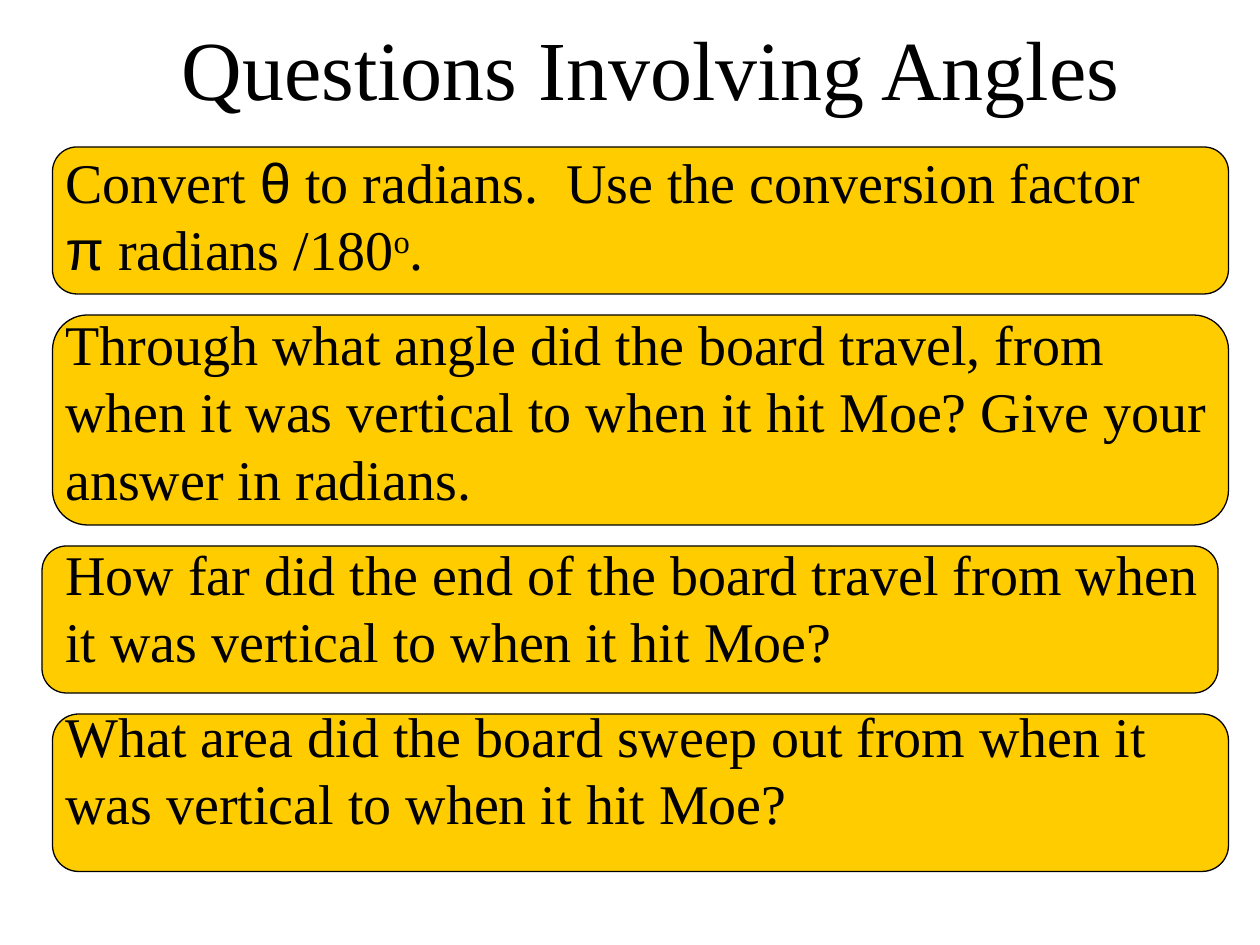
from dataclasses import dataclass

from pptx import Presentation
from pptx.dml.color import RGBColor
from pptx.enum.shapes import MSO_SHAPE
from pptx.enum.text import PP_ALIGN
from pptx.util import Inches, Pt


@dataclass(frozen=True)
class Theme:
    ink: RGBColor = RGBColor(0x00, 0x00, 0x00)
    card: RGBColor = RGBColor(0xFF, 0xCC, 0x00)
    serif: str = "Times New Roman"
    greek: str = "Arial"
    title_size: int = 48
    question_size: int = 32
    question_gap: int = 16
    outline: float = 0.75


THEME = Theme()
TITLE = "Questions Involving Angles"
SUPERSCRIPT = "superscript"
GREEK = "greek"

# Each question is a list of (text, style) pieces.
QUESTIONS = [
    [("Convert ", None), ("θ", GREEK),
     (" to radians.  Use the conversion factor\v", None), ("π", GREEK),
     (" radians /180", None), ("o", SUPERSCRIPT), (".", None)],
    [("Through what angle did the board travel, from when it was vertical "
      "to when it hit Moe? Give your answer in radians.", None)],
    [("How far did the end of the board travel from when it was vertical "
      "to when it hit Moe?", None)],
    [("What area did the board sweep out from when it was vertical "
      "to when it hit Moe?", None)],
]

# Grid of 12 units to the inch; cards are (left column, rows tall).
UNIT = Inches(1) / 12
CARDS = [(5, 14), (5, 20), (4, 14), (5, 15)]
FIRST_ROW, ROW_GAP, CARD_COLUMNS = 14, 2, 112


def units(count):
    return round(count * UNIT)


def add_cards(slide):
    row = FIRST_ROW
    for column, rows in CARDS:
        card = slide.shapes.add_shape(
            MSO_SHAPE.ROUNDED_RECTANGLE,
            units(column), units(row), units(CARD_COLUMNS), units(rows))
        card.shadow.inherit = False
        card.fill.solid()
        card.fill.fore_color.rgb = THEME.card
        card.line.color.rgb = THEME.ink
        card.line.width = Pt(THEME.outline)
        row += rows + ROW_GAP


def add_frame(slide, left, top, width, height):
    box = slide.shapes.add_textbox(
        Inches(left), Inches(top), Inches(width), Inches(height))
    box.text_frame.word_wrap = True
    return box.text_frame


def set_font(font, size):
    font.name = THEME.serif
    font.size = Pt(size)
    font.color.rgb = THEME.ink


def add_questions(slide):
    frame = add_frame(slide, 0.42, 1.12, 9.42, 5.7)
    for index, pieces in enumerate(QUESTIONS):
        question = frame.paragraphs[0] if index == 0 else frame.add_paragraph()
        if index:
            question.space_before = Pt(THEME.question_gap)
        for text, style in pieces:
            lines = text.split("\v")
            for number, line in enumerate(lines):
                if number:
                    question.add_line_break()
                if not line:
                    continue
                run = question.add_run()
                run.text = line
                set_font(run.font, THEME.question_size)
                if style == GREEK:
                    run.font.name = THEME.greek
                elif style == SUPERSCRIPT:
                    run.font._element.set("baseline", "30000")


def add_title(slide):
    title = add_frame(slide, 1, 0.08, 8.33, 0.9).paragraphs[0]
    title.text = TITLE
    title.alignment = PP_ALIGN.CENTER
    set_font(title.font, THEME.title_size)


def main():
    deck = Presentation()
    deck.slide_width, deck.slide_height = Inches(10), Inches(7.5)
    slide = deck.slides.add_slide(deck.slide_layouts[6])
    add_cards(slide)
    add_questions(slide)
    add_title(slide)
    deck.save("out.pptx")


if __name__ == "__main__":
    main()
